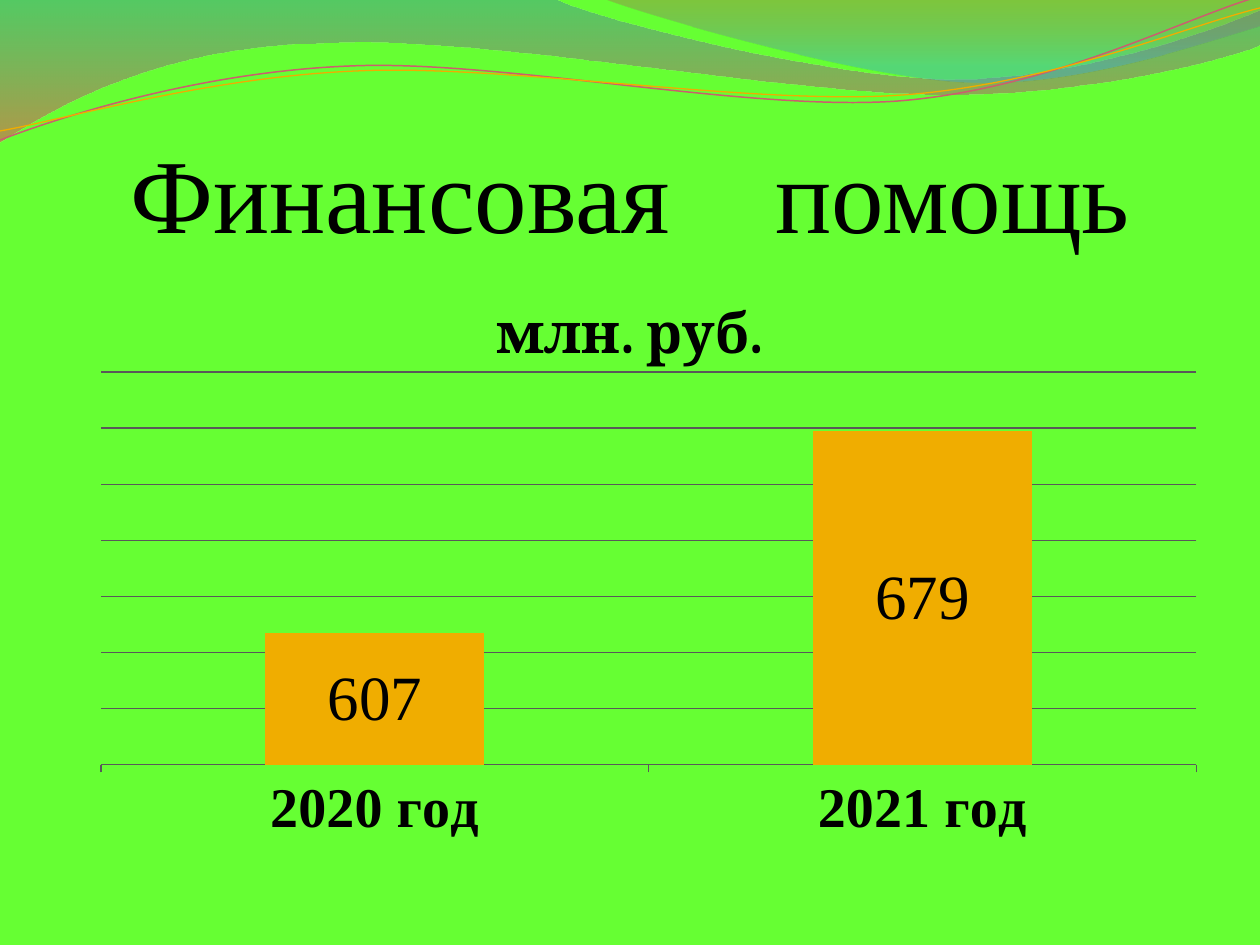
import pptx
import pptx.chart.data
import pptx.dml.color
import pptx.enum.chart
import pptx.enum.text
import pptx.oxml
import pptx.oxml.ns
import pptx.util

RGBColor = pptx.dml.color.RGBColor
GREEN = RGBColor(0x66, 0xFF, 0x33)
BLACK = RGBColor(0x00, 0x00, 0x00)
GRAY = RGBColor(0x59, 0x59, 0x59)
ORANGE = RGBColor(0xF0, 0xAD, 0x00)
ROSE = RGBColor(0xCB, 0x5F, 0x6E)
TEAL = RGBColor(0x3F, 0x8A, 0x9F)
RED = RGBColor(0xEF, 0x44, 0x5B)
CRIMSON = RGBColor(0xB8, 0x42, 0x53)
CYAN = RGBColor(0x42, 0xAB, 0xC7)

SERIF = "Times New Roman"
HEADING = "Cambria"
PX = 914400 / 126


def px(n):
    return pptx.util.Emu(round(n * PX))


class SlideBuilder:
    def __init__(self, slide, color):
        self.s = slide
        self.color = color

    def background(self, color):
        fill = self.s.background.fill
        fill.solid()
        fill.fore_color.rgb = color

    def outline(self, start, segments, close):
        ends = [seg[-1] for seg in segments]
        builder = self.s.shapes.build_freeform(*start, scale=PX)
        builder.add_line_segments(ends, close=close)
        sp = builder.convert_to_shape()
        sp.shadow.inherit = False
        left, top = (min(axis) for axis in zip(start, *ends))
        lines = list(sp._element.iter(pptx.oxml.ns.qn("a:lnTo")))
        for line, seg in zip(lines, segments):
            if len(seg) == 3:
                pts = "".join(f'<a:pt x="{x - left}" y="{y - top}"/>' for x, y in seg)
                bezier = pptx.oxml.parse_xml(
                    f'<a:cubicBezTo {pptx.oxml.ns.nsdecls("a")}>{pts}</a:cubicBezTo>'
                )
                line.getparent().replace(line, bezier)
        return sp

    def wave(self, start, segments, stops):
        sp = self.outline(start, segments, True)
        sp.line.fill.background()
        sp.fill.gradient()
        sp.fill.gradient_angle = 270
        for stop, (position, color, opacity) in zip(sp.fill.gradient_stops, stops):
            stop.position = position
            stop.color.rgb = color
        colors = sp._element.spPr.iter(pptx.oxml.ns.qn("a:srgbClr"))
        for clr, (position, color, opacity) in zip(colors, stops):
            alpha = pptx.oxml.parse_xml(
                f'<a:alpha {pptx.oxml.ns.nsdecls("a")} val="{opacity * 1000}"/>'
            )
            clr.append(alpha)

    def curve(self, start, segments, color, width):
        sp = self.outline(start, segments, False)
        sp.fill.background()
        sp.line.color.rgb = color
        sp.line.width = pptx.util.Pt(width)

    def style(self, font, size, name, bold=False):
        font.size = pptx.util.Pt(size)
        font.name = name
        font.bold = bold
        font.color.rgb = self.color

    def title(self, box, runs, size):
        sp = self.s.shapes.add_textbox(*map(px, box))
        tf = sp.text_frame
        tf.word_wrap = True
        tf.vertical_anchor = pptx.enum.text.MSO_ANCHOR.BOTTOM
        tf.margin_left = tf.margin_right = tf.margin_bottom = 0
        p = tf.paragraphs[0]
        p.alignment = pptx.enum.text.PP_ALIGN.CENTER
        for text, spacing in runs:
            r = p.add_run()
            r.text = text
            self.style(r.font, size, SERIF)
            if spacing:
                r._r.get_or_add_rPr().set("spc", str(spacing * 100))

    def column_chart(self, box, title, categories, values, scale, plot):
        data = pptx.chart.data.CategoryChartData()
        data.categories = categories
        data.add_series("Series 1", values)
        kind = pptx.enum.chart.XL_CHART_TYPE.COLUMN_STACKED
        chart = self.s.shapes.add_chart(kind, *map(px, box), data).chart
        self.style(chart.font, 18, HEADING)
        chart.has_legend = False
        chart.has_title = True
        r = chart.chart_title.text_frame.paragraphs[0].add_run()
        r.text = title
        self.style(r.font, 32, HEADING, True)
        chart.chart_title.include_in_layout = False

        axis = chart.category_axis
        axis.major_tick_mark = pptx.enum.chart.XL_TICK_MARK.OUTSIDE
        axis.format.line.color.rgb = GRAY
        self.style(axis.tick_labels.font, 32, SERIF, True)
        axis = chart.value_axis
        axis.minimum_scale, axis.maximum_scale, axis.major_unit = scale
        axis.visible = False
        axis.has_major_gridlines = True
        axis.major_gridlines.format.line.color.rgb = GRAY
        axis.major_gridlines.format.line.width = pptx.util.Pt(0.75)

        bars = chart.plots[0]
        bars.gap_width = 150
        bars.overlap = 100
        bars.vary_by_categories = False
        fill = bars.series[0].format.fill
        fill.solid()
        fill.fore_color.rgb = ORANGE
        labels = bars.series[0].data_labels
        labels.show_value = True
        labels.number_format = "0"
        labels.number_format_is_linked = False
        self.style(labels.font, 36, SERIF)
        self.place_plot(chart, plot, box[2:])

    def place_plot(self, chart, plot, size):
        modes = "".join(f'<c:{k}Mode val="edge"/>' for k in "xy")
        shares = [length / full for length, full in zip(plot, size * 2)]
        sizes = "".join(f'<c:{k} val="{v}"/>' for k, v in zip("xywh", shares))
        layout = pptx.oxml.parse_xml(
            f'<c:layout {pptx.oxml.ns.nsdecls("c")}><c:manualLayout>'
            f'<c:layoutTarget val="inner"/>{modes}{sizes}'
            "</c:manualLayout></c:layout>"
        )
        area = chart._chartSpace.chart.plotArea
        for old in area.findall(pptx.oxml.ns.qn("c:layout")):
            area.remove(old)
        area.insert(0, layout)


def main():
    prs = pptx.Presentation()
    prs.slide_width = px(1260)
    prs.slide_height = px(945)
    s = SlideBuilder(prs.slides.add_slide(prs.slide_layouts[6]), BLACK)
    s.background(GREEN)
    s.wave(
        (0, 0),
        [
            [(554, -1)],
            [(600, 21), (837, 79), (955, 79)],
            [(1075, 79), (1207, 33), (1260, 11)],
            [(1261, 45)],
            [(1239, 55), (1096, 96), (940, 94)],
            [(784, 94), (481, 35), (324, 43)],
            [(163, 45), (58, 105), (-1, 142)],
            [(0, 0)],
        ],
        [(0, TEAL, 45), (1, RED, 55)],
    )
    s.wave(
        (604, -1),
        [
            [(641, 14), (859, 78), (969, 82)],
            [(1079, 87), (1211, 40), (1260, 26)],
            [(1260, 0)],
            [(604, -1)],
        ],
        [(0, CRIMSON, 30), (0.8, CYAN, 45)],
    )
    s.curve(
        (0, 140),
        [
            [(60, 117), (199, 72), (349, 66)],
            [(498, 59), (747, 112), (898, 101)],
            [(1050, 89), (1182, 19), (1257, -3)],
        ],
        ROSE,
        0.85,
    )
    s.curve(
        (0, 131),
        [
            [(59, 121), (207, 77), (357, 71)],
            [(508, 64), (752, 106), (903, 95)],
            [(1053, 84), (1186, 26), (1260, 8)],
        ],
        ORANGE,
        0.75,
    )
    s.title((63, 97, 1134, 157), [("Финансовая", 0), (" ", 45), ("помощь", 0)], 60)
    s.column_chart(
        (63, 267, 1134, 605),
        "млн. руб.",
        ["2020 год", "2021 год"],
        [607, 679],
        (560, 700, 20),
        (38, 105, 1096, 393),
    )
    prs.save("out.pptx")


if __name__ == "__main__":
    main()
